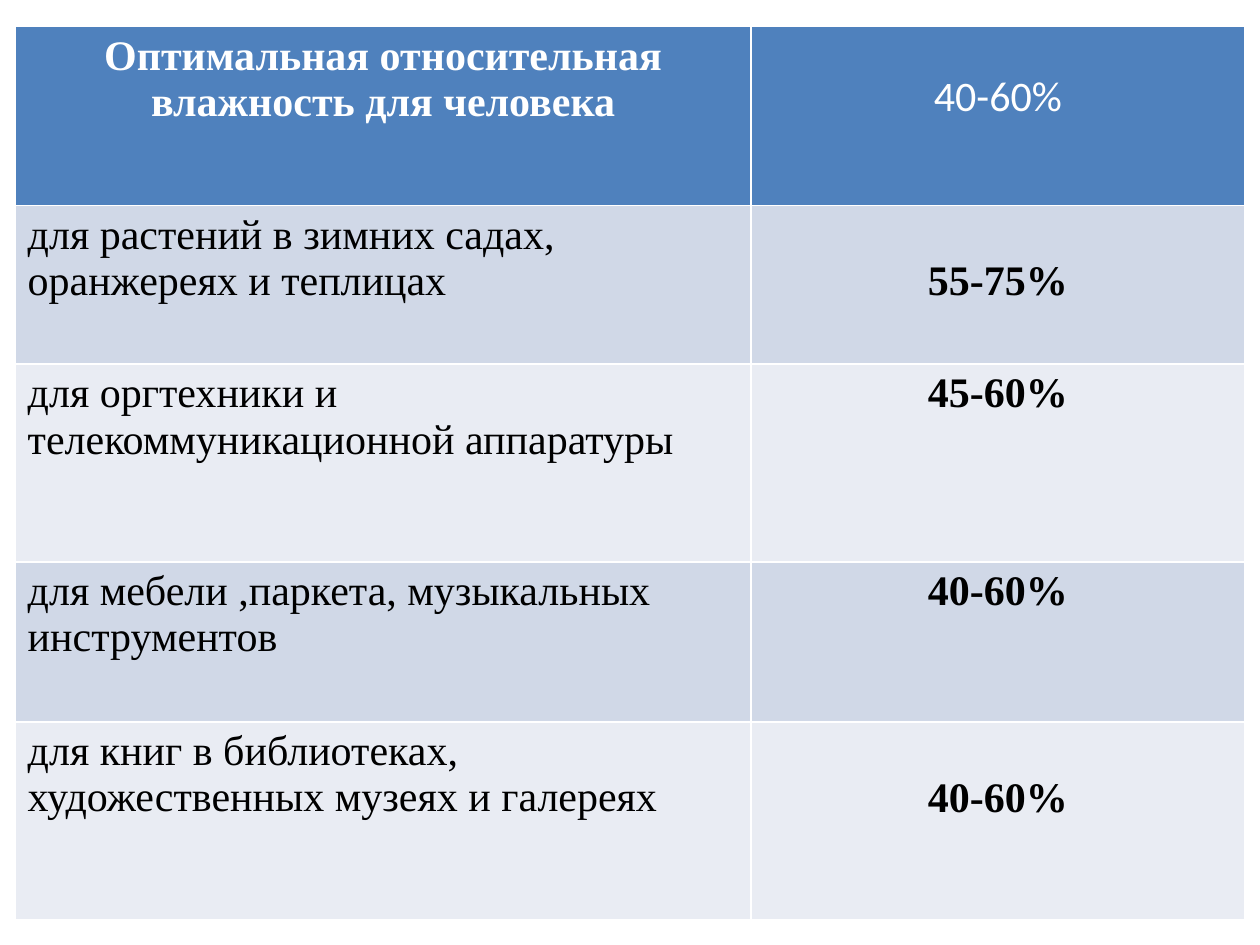
from lxml import etree
from pptx import Presentation
from pptx.dml.color import RGBColor
from pptx.enum import text
from pptx.oxml.ns import qn
from pptx.util import Inches, Pt

SERIF, SANS = "Times New Roman", "Calibri"
WHITE, BLACK = "FFFFFF", "000000"
HEADER_FILL, BAND_FILLS = "4F81BD", ("D0D8E7", "E9ECF3")
LEFT, TOP = 0.12, 0.21
COL_WIDTHS = (5.84, 3.92)
TOP_MARGIN = 0.05

# label, humidity, row height, extra space above the humidity value
ROWS = [
    ("Оптимальная относительная влажность для человека", "40-60%", 1.42, 0.31),
    ("для растений в зимних садах, оранжереях и теплицах", "55-75%", 1.26, 0.37),
    ("для оргтехники и телекоммуникационной аппаратуры", "45-60%", 1.57, 0),
    ("для мебели ,паркета, музыкальных инструментов", "40-60%", 1.27, 0),
    ("для книг в библиотеках, художественных музеях и галереях", "40-60%", 1.57, 0.37),
]


def rgb(color):
    return RGBColor.from_string(color)


def add_borders(cell, color, width):
    tc_pr = cell._tc.get_or_add_tcPr()
    for side in ("a:lnL", "a:lnR", "a:lnT", "a:lnB"):
        ln = etree.SubElement(tc_pr, qn(side), w=str(Pt(width)))
        fill = etree.SubElement(ln, qn("a:solidFill"))
        etree.SubElement(fill, qn("a:srgbClr"), val=color)


def fill_cell(cell, words, fill, color, font, bold, centred, gap=0):
    add_borders(cell, WHITE, 0.96)
    cell.fill.solid()
    cell.fill.fore_color.rgb = rgb(fill)
    cell.margin_top = Inches(TOP_MARGIN + gap)
    p = cell.text_frame.paragraphs[0]
    p.alignment = text.PP_ALIGN.CENTER if centred else text.PP_ALIGN.LEFT
    r = p.add_run()
    r.text = words
    r.font.name, r.font.size, r.font.bold = font, Pt(24), bold
    r.font.color.rgb = rgb(color)


prs = Presentation()
prs.slide_width, prs.slide_height = Inches(10), Inches(7.5)
s = prs.slides.add_slide(prs.slide_layouts[6])

height = sum(row[2] for row in ROWS)
table = s.shapes.add_table(len(ROWS), len(COL_WIDTHS), Inches(LEFT), Inches(TOP),
                           Inches(sum(COL_WIDTHS)), Inches(height)).table
for column, width in zip(table.columns, COL_WIDTHS):
    column.width = Inches(width)

for i, (label, humidity, row_height, gap) in enumerate(ROWS):
    table.rows[i].height = Inches(row_height)
    header = i == 0
    fill = HEADER_FILL if header else BAND_FILLS[(i - 1) % 2]
    color = WHITE if header else BLACK
    fill_cell(table.cell(i, 0), label, fill, color, SERIF, header, header)
    fill_cell(table.cell(i, 1), humidity, fill, color,
              SANS if header else SERIF, not header, True, gap)

prs.save("out.pptx")
